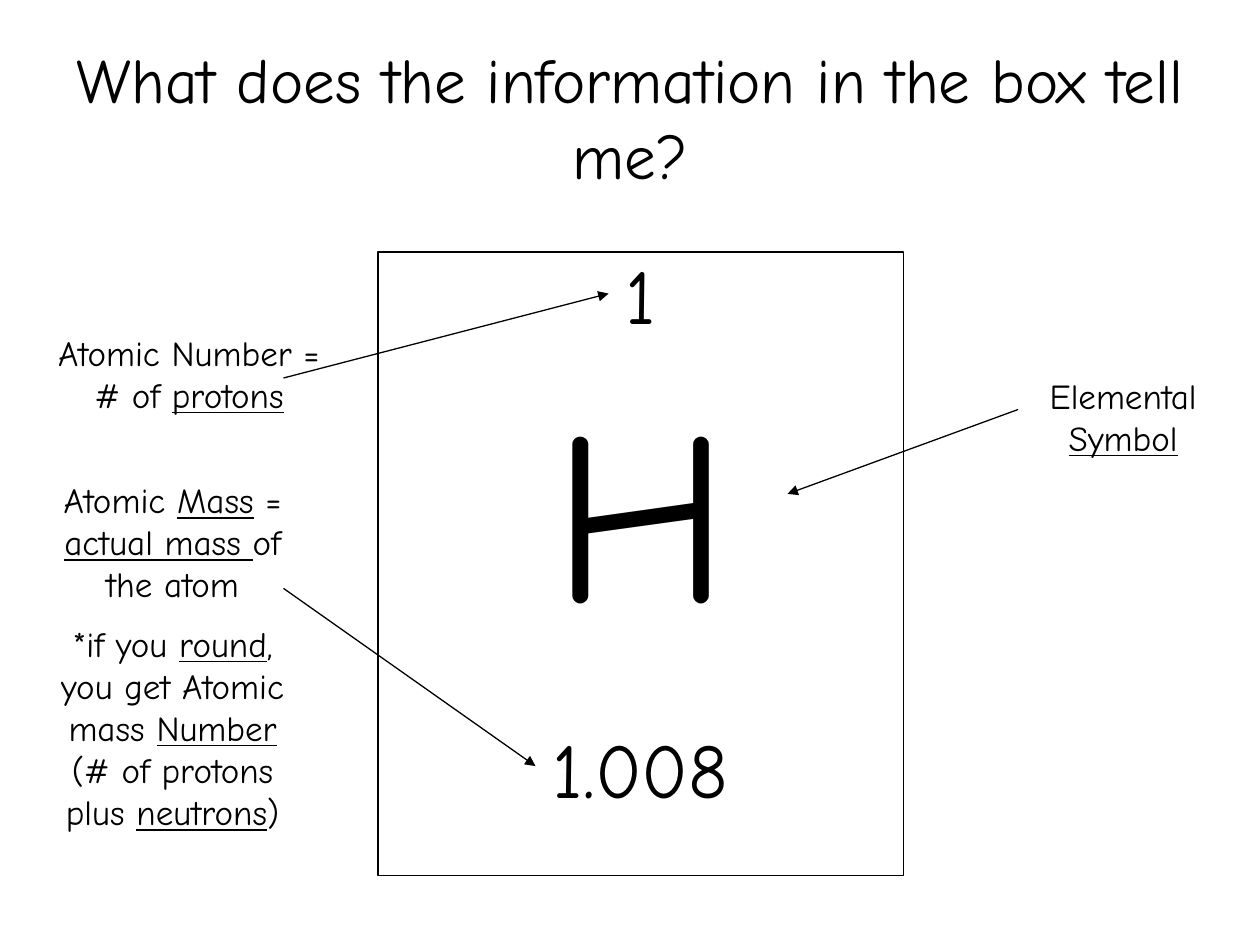
from lxml import etree
from pptx import Presentation
from pptx.dml.color import RGBColor
from pptx.enum import shapes, text
from pptx.oxml import ns
from pptx.util import Inches, Pt

BLACK = RGBColor(0, 0, 0)
WHITE = RGBColor(255, 255, 255)
FONT = "Comic Neue"
LABEL_SIZE = 20

# Labels: place, then paragraphs of (wording, underlined) runs
LABELS = [
    ((0.25, 2.58, 2.5, 0.77),
     [[("Atomic Number = # of ", False), ("protons", True)]]),
    ((0.33, 3.75, 2.08, 3.3),
     [[("Atomic ", False), ("Mass", True), (" = ", False),
       ("actual mass ", True), ("of the atom", False)],
      [("*if you ", False), ("round", True),
       (", you get Atomic mass ", False), ("Number", True),
       (" (# of protons plus ", False), ("neutrons", True), (")", False)]]),
    ((8.08, 2.92, 1.67, 0.77),
     [[("Elemental ", False), ("Symbol", True)]]),
]

# Arrows: start x, start y, end x, end y
ARROWS = [
    (2.25, 3, 4.83, 2.33),
    (2.25, 4.67, 4.25, 6.08),
    (8.08, 3.25, 6.25, 3.92),
]

# Element box: wording, size, space before
ELEMENT_LINES = [("1", 44, 8.8), ("H", 140, 28), ("1.008", 44, 44)]


def place(shape, left, top, width, height):
    shape.left, shape.top = Inches(left), Inches(top)
    shape.width, shape.height = Inches(width), Inches(height)


def get_para(frame, index):
    para = frame.paragraphs[0] if index == 0 else frame.add_paragraph()
    para.alignment = text.PP_ALIGN.CENTER
    return para


def add_span(para, wording, size, underlined=False):
    span = para.add_run()
    span.text = wording
    span.font.name = FONT
    span.font.size = Pt(size)
    span.font.color.rgb = BLACK
    if underlined:
        span.font.underline = True


def fill_title(title):
    place(title, 0.5, 0.3, 9, 1.25)
    frame = title.text_frame
    frame.auto_size = text.MSO_AUTO_SIZE.NONE
    frame.vertical_anchor = text.MSO_ANCHOR.MIDDLE
    add_span(get_para(frame, 0),
             "What does the information in the box tell me?", 36)


def fill_element_box(box):
    place(box, 3, 2, 4.17, 4.95)
    box.line.color.rgb = BLACK
    box.line.width = Pt(0.75)
    frame = box.text_frame
    frame.auto_size = text.MSO_AUTO_SIZE.NONE
    for index, (wording, size, gap) in enumerate(ELEMENT_LINES):
        para = get_para(frame, index)
        para.line_spacing = 0.9
        para.space_before = Pt(gap)
        # No bullet and no hanging indent
        props = para._p.get_or_add_pPr()
        props.set("marL", "0")
        props.set("indent", "0")
        etree.SubElement(props, ns.qn("a:buNone"))
        add_span(para, wording, size)


def add_label(page, position, paragraphs):
    box = page.shapes.add_textbox(*map(Inches, position))
    frame = box.text_frame
    frame.word_wrap = True
    frame.auto_size = text.MSO_AUTO_SIZE.SHAPE_TO_FIT_TEXT
    for index, spans in enumerate(paragraphs):
        para = get_para(frame, index)
        para.space_before = Pt(LABEL_SIZE / 2)
        for wording, underlined in spans:
            add_span(para, wording, LABEL_SIZE, underlined)


def add_arrow(page, ends):
    arrow = page.shapes.add_connector(
        shapes.MSO_CONNECTOR.STRAIGHT, *map(Inches, ends))
    arrow.line.color.rgb = BLACK
    arrow.line.width = Pt(0.75)
    etree.SubElement(arrow.line._get_or_add_ln(), ns.qn("a:tailEnd"),
                     type="triangle")
    etree.SubElement(arrow._element.spPr, ns.qn("a:effectLst"))


def main():
    deck = Presentation()
    deck.slide_width, deck.slide_height = Inches(10), Inches(7.5)
    page = deck.slides.add_slide(deck.slide_layouts[1])
    page.background.fill.solid()
    page.background.fill.fore_color.rgb = WHITE

    # Title and the element's box
    fill_title(page.shapes.title)
    fill_element_box(page.placeholders[1])

    # Arrows with their labels
    for ends, (position, paragraphs) in zip(ARROWS, LABELS):
        add_arrow(page, ends)
        add_label(page, position, paragraphs)

    deck.save("out.pptx")


if __name__ == "__main__":
    main()
